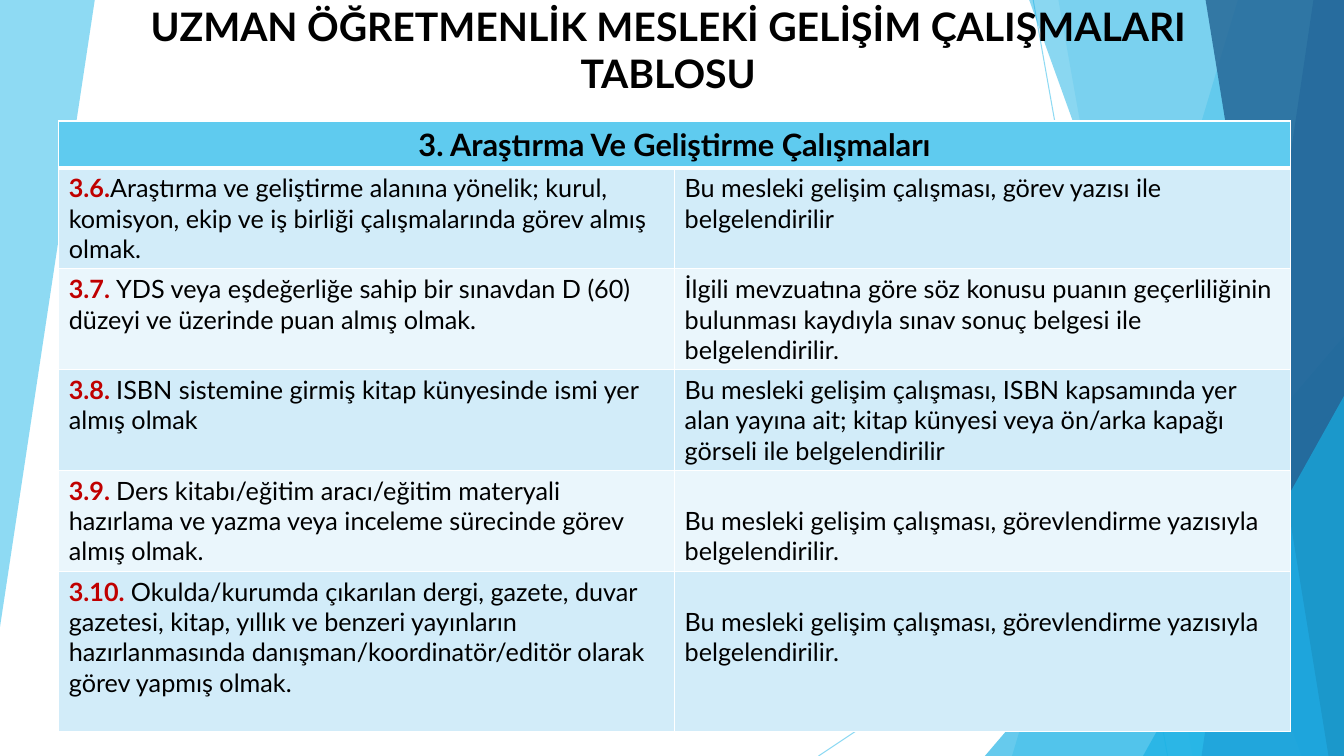
"""Build the slide that tabulates research and development work for expert teachers."""
from dataclasses import dataclass

import lxml.etree
import pptx
import pptx.dml.color
import pptx.enum.shapes
import pptx.enum.text
import pptx.oxml.ns
import pptx.util

qn = pptx.oxml.ns.qn


@dataclass(frozen=True)
class Theme:
    font: str = "Lato"
    title_size: int = 28
    header_size: int = 22
    body_size: int = 18
    ink: str = "000000"
    number: str = "C00000"
    white: str = "FFFFFF"
    sky: str = "5FCBEF"
    cyan: str = "17B0E4"
    blue: str = "2E83C3"
    navy: str = "226292"
    bands: tuple[str, str] = ("D2ECF9", "EAF6FC")


@dataclass(frozen=True)
class Polygon:
    points: tuple[tuple[float, float], ...]
    color: str
    opacity: int


@dataclass(frozen=True)
class Triangle:
    left: float
    top: float
    color: str
    opacity: int


@dataclass(frozen=True)
class Ray:
    start: tuple[float, float]
    end: tuple[float, float]
    color: str
    opacity: int


@dataclass(frozen=True)
class Activity:
    number: str
    task: str
    proof: str
    height: float = 12
    proof_drop: float = 0


THEME = Theme()
WIDTH, HEIGHT = pptx.util.Inches(13.33), pptx.util.Inches(7.5)
COLUMNS, ROWS = 160, 90
TABLE_LEFT, TABLE_TOP, TABLE_COLUMN = 7, 14.4, 73.32
HEADER_HEIGHT = 5.52
LINE_HEIGHT = 3.6
THIN, THICK = 1, 3


def across(columns: float) -> int:
    """Return the length of a number of grid columns."""
    return round(WIDTH * columns / COLUMNS)


def down(rows: float) -> int:
    """Return the length of a number of grid rows."""
    return round(HEIGHT * rows / ROWS)


def wedge(top: float, bottom: float, color: str, opacity: int) -> Polygon:
    """Return a full-height panel between a slanted edge and the right side."""
    return Polygon(((top, 0), (COLUMNS, 0), (COLUMNS, ROWS), (bottom, ROWS)), color, opacity)


BACKDROP = (
    Polygon(((0, 0), (11.28, 0), (0, 74.64)), THEME.sky, 70),
    Ray((123, 0), (139, ROWS), THEME.sky, 70),
    Ray((COLUMNS, 48.36), (97.44, ROWS), THEME.sky, 70),
    wedge(147.36, 120.48, THEME.sky, 36),
    wedge(126, 141.96, THEME.sky, 20),
    Triangle(117.24, 40, THEME.cyan, 66),
    wedge(122.52, 154.92, THEME.cyan, 50),
    wedge(156.36, 143.04, THEME.blue, 70),
    wedge(143.52, 158.16, THEME.navy, 80),
    Triangle(136.08, 47.16, THEME.cyan, 66),
)
TITLE = "UZMAN ÖĞRETMENLİK MESLEKİ GELİŞİM ÇALIŞMALARI TABLOSU"
HEADER = "3. Araştırma Ve Geliştirme Çalışmaları"
ASSIGNMENT = "Bu mesleki gelişim çalışması, görevlendirme yazısıyla belgelendirilir."
ACTIVITIES = (
    Activity("3.6.", "Araştırma ve geliştirme alanına yönelik; kurul, komisyon, ekip ve iş birliği "
             "çalışmalarında görev almış olmak.",
             "Bu mesleki gelişim çalışması, görev yazısı ile belgelendirilir"),
    Activity("3.7. ", "YDS veya eşdeğerliğe sahip bir sınavdan D (60) düzeyi ve üzerinde puan almış olmak.",
             "İlgili mevzuatına göre söz konusu puanın geçerliliğinin bulunması kaydıyla "
             "sınav sonuç belgesi ile belgelendirilir."),
    Activity("3.8. ", "ISBN sistemine girmiş kitap künyesinde ismi yer almış olmak",
             "Bu mesleki gelişim çalışması, ISBN kapsamında yer alan yayına ait; "
             "kitap künyesi veya ön/arka kapağı görseli ile belgelendirilir"),
    Activity("3.9. ", "Ders kitabı/eğitim aracı/eğitim materyali hazırlama ve yazma veya inceleme "
             "sürecinde görev almış olmak.", ASSIGNMENT, proof_drop=LINE_HEIGHT),
    Activity("3.10. ", "Okulda/kurumda çıkarılan dergi, gazete, duvar gazetesi, kitap, yıllık ve benzeri "
             "yayınların hazırlanmasında danışman/koordinatör/editör olarak görev yapmış olmak.",
             ASSIGNMENT, height=19.08, proof_drop=LINE_HEIGHT),
)


def rgb(color: str) -> pptx.dml.color.RGBColor:
    """Return a colour object for a hexadecimal value."""
    return pptx.dml.color.RGBColor.from_string(color)


def write(para, text: str, *, size: int = THEME.body_size, color: str = THEME.ink,
          bold: bool = False, centered: bool = False) -> None:
    """Append one formatted span to a paragraph."""
    span = para.add_run()
    span.text = text
    span.font.name = THEME.font
    span.font.size = pptx.util.Pt(size)
    span.font.bold = bold
    span.font.color.rgb = rgb(color)
    if centered:
        para.alignment = pptx.enum.text.PP_ALIGN.CENTER


def set_opacity(shape, opacity: int) -> None:
    """Make the only colour of a shape partly transparent."""
    color = next(shape.element.spPr.iter(qn("a:srgbClr")))
    lxml.etree.SubElement(color, qn("a:alpha")).set("val", str(opacity * 1000))


def draw_backdrop(page, part: Polygon | Triangle | Ray) -> None:
    """Draw one translucent part of the backdrop."""
    if isinstance(part, Ray):
        shape = page.shapes.add_connector(
            pptx.enum.shapes.MSO_CONNECTOR.STRAIGHT,
            across(part.start[0]), down(part.start[1]), across(part.end[0]), down(part.end[1]))
        shape.line.color.rgb = rgb(part.color)
        shape.line.width = pptx.util.Pt(0.75)
        lxml.etree.SubElement(shape.element.spPr, qn("a:effectLst"))
    else:
        if isinstance(part, Triangle):
            shape = page.shapes.add_shape(
                pptx.enum.shapes.MSO_SHAPE.ISOSCELES_TRIANGLE, across(part.left), down(part.top),
                across(COLUMNS - part.left), down(ROWS - part.top))
            shape.adjustments[0] = 1
        else:
            points = [(across(column), down(row)) for column, row in part.points]
            outline = page.shapes.build_freeform(*points[0])
            outline.add_line_segments(points[1:], close=True)
            shape = outline.convert_to_shape()
        shape.fill.solid()
        shape.fill.fore_color.rgb = rgb(part.color)
        shape.line.fill.background()
        shape.shadow.inherit = False
    set_opacity(shape, part.opacity)


def style_cell(cell, color: str, *, top: int = THIN, bottom: int = THIN) -> None:
    """Fill a cell and give it white borders."""
    cell.fill.solid()
    cell.fill.fore_color.rgb = rgb(color)
    properties = cell._tc.get_or_add_tcPr()
    widths = {"a:lnL": THIN, "a:lnR": THIN, "a:lnT": top, "a:lnB": bottom}
    for index, (side, width) in enumerate(widths.items()):
        border = lxml.etree.Element(qn(side), w=str(pptx.util.Pt(width)))
        fill = lxml.etree.SubElement(border, qn("a:solidFill"))
        lxml.etree.SubElement(fill, qn("a:srgbClr"), val=THEME.white)
        properties.insert(index, border)


def draw_title(page) -> None:
    """Place the title above the backdrop."""
    box = page.shapes.title
    box.left, box.top, box.width, box.height = across(7), down(3.72), across(145.08), down(8.4)
    box.text_frame.word_wrap = True
    box.text_frame.auto_size = pptx.enum.text.MSO_AUTO_SIZE.NONE
    box.text_frame.vertical_anchor = pptx.enum.text.MSO_ANCHOR.BOTTOM
    write(box.text_frame.paragraphs[0], TITLE, size=THEME.title_size, bold=True, centered=True)
    box.element.getparent().append(box.element)


def draw_table(page) -> None:
    """Draw the merged header and one row for each activity."""
    heights = [HEADER_HEIGHT, *(activity.height for activity in ACTIVITIES)]
    table = page.shapes.add_table(len(heights), 2, across(TABLE_LEFT), down(TABLE_TOP),
                                  across(2 * TABLE_COLUMN), down(sum(heights))).table
    for column in table.columns:
        column.width = across(TABLE_COLUMN)
    for row, height in zip(table.rows, heights):
        row.height = down(height)
    header, partner = table.rows[0].cells
    header.merge(partner)
    for cell in (header, partner):
        style_cell(cell, THEME.sky, bottom=THICK)
    write(header.text_frame.paragraphs[0], HEADER, size=THEME.header_size, bold=True, centered=True)
    for index, activity in enumerate(ACTIVITIES):
        task, proof = table.rows[index + 1].cells
        for cell in (task, proof):
            style_cell(cell, THEME.bands[index % 2], top=THIN if index else THICK)
        para = task.text_frame.paragraphs[0]
        write(para, activity.number, color=THEME.number, bold=True)
        write(para, activity.task)
        write(proof.text_frame.paragraphs[0], activity.proof)
        proof.margin_top += down(activity.proof_drop)


def main() -> None:
    """Build and save the deck."""
    deck = pptx.Presentation()
    deck.slide_width, deck.slide_height = WIDTH, HEIGHT
    page = deck.slides.add_slide(deck.slide_layouts[5])
    for part in BACKDROP:
        draw_backdrop(page, part)
    draw_title(page)
    draw_table(page)
    deck.save("out.pptx")


if __name__ == "__main__":
    main()
